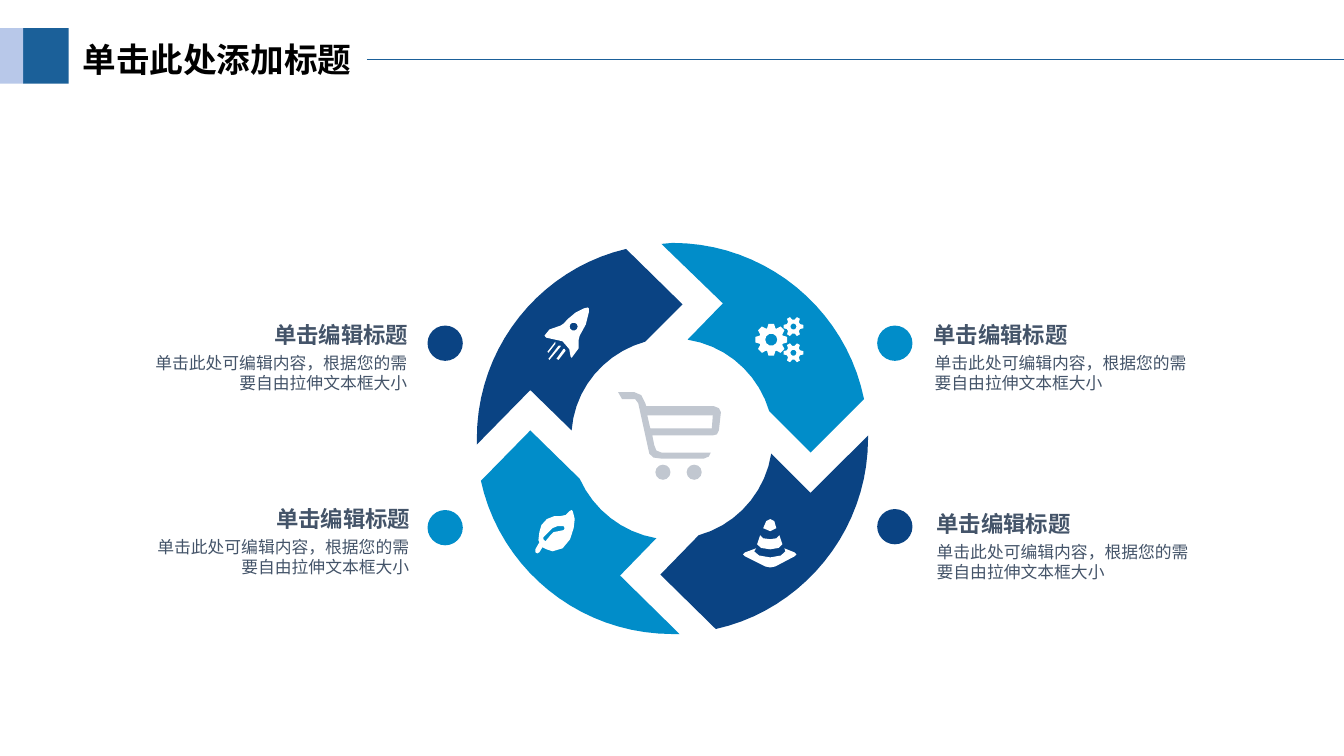
from math import cos, dist, sin, tau

from lxml.etree import SubElement
from pptx import Presentation
from pptx.dml.color import RGBColor
from pptx.enum.shapes import MSO_CONNECTOR as Connector, MSO_SHAPE as Shape
from pptx.enum.text import MSO_AUTO_SIZE as AutoSize, PP_ALIGN as Align
from pptx.oxml.ns import qn
from pptx.util import Inches, Pt

NAVY = RGBColor(0x0A, 0x43, 0x83)
SKY = RGBColor(0x01, 0x8D, 0xC9)
STEEL = RGBColor(0x1B, 0x60, 0x99)
PALE = RGBColor(0xB8, 0xC8, 0xE9)
SILVER = RGBColor(0xC1, 0xC7, 0xD0)
SLATE = RGBColor(0x44, 0x54, 0x69)
WHITE = RGBColor(0xFF, 0xFF, 0xFF)
BLACK = RGBColor(0, 0, 0)
CJK = "Noto Sans CJK SC"

deck = Presentation()
deck.slide_width, deck.slide_height = Inches(13.33), Inches(7.5)
slide = deck.slides.add_slide(deck.slide_layouts[6])
shapes = slide.shapes


def add_text(text, left, top, width, height, size, color=SLATE, font="Arial",
             bold=False, align=Align.LEFT, inset=0.0):
    box = shapes.add_textbox(*map(Inches, (left, top, width, height)))
    frame = box.text_frame
    frame.word_wrap = True
    frame.auto_size = AutoSize.SHAPE_TO_FIT_TEXT
    frame.margin_left = frame.margin_right = Inches(inset)
    frame.margin_top = frame.margin_bottom = Inches(inset / 2)
    para = frame.paragraphs[0]
    para.alignment = align
    span = para.add_run()
    span.text = text
    span.font.size, span.font.bold, span.font.name = Pt(size), bold, font
    span.font.color.rgb = color
    SubElement(span.font._element, qn("a:ea"), typeface=CJK)


def add_outline(contours, color):
    """Contour items: (x, y) corner, (cx, cy, r) circle, or a six-number Bezier."""
    builder = None
    for contour in contours:
        points = []
        for item in contour:
            if len(item) == 2:
                points.append(item)
            elif len(item) == 3:
                x, y, r = item
                points += [(x + r * cos(tau * i / 10), y + r * sin(tau * i / 10))
                           for i in range(10)]
            else:
                (ax, ay), (bx, by, cx, cy, dx, dy) = points[-1], item
                # Longer curves get more segments
                steps = 1 + int(8 * dist((ax, ay), (dx, dy)))
                for t in (i / steps for i in range(1, steps + 1)):
                    weights = (1 - t) ** 3, 3 * t * (1 - t) ** 2, 3 * t * t * (1 - t), t ** 3
                    points.append((sum(w * x for w, x in zip(weights, (ax, bx, cx, dx))),
                                   sum(w * y for w, y in zip(weights, (ay, by, cy, dy)))))
        start, *rest = [(Inches(x), Inches(y)) for x, y in points]
        if builder is None:
            builder = shapes.build_freeform(*start, scale=1.0)
        else:
            builder.move_to(*start)
        builder.add_line_segments(rest, close=True)
    shape = builder.convert_to_shape()
    shape.shadow.inherit = False
    shape.fill.solid()
    shape.fill.fore_color.rgb = color
    shape.line.fill.background()


# Header blocks, callout dots and cart wheels
DOT, WHEEL = 0.35, 0.15
for kind, left, top, width, height, color in (
    (Shape.RECTANGLE, 0.23, 0.28, 0.45, 0.55, STEEL),
    (Shape.RECTANGLE, 0, 0.28, 0.23, 0.55, PALE),
    (Shape.OVAL, 8.7, 3.23, DOT, DOT, SKY),
    (Shape.OVAL, 4.24, 3.23, DOT, DOT, NAVY),
    (Shape.OVAL, 4.24, 5.06, DOT, DOT, SKY),
    (Shape.OVAL, 8.7, 5.05, DOT, DOT, NAVY),
    (Shape.OVAL, 6.5, 4.61, WHEEL, WHEEL, SILVER),
    (Shape.OVAL, 6.81, 4.61, WHEEL, WHEEL, SILVER),
):
    block = shapes.add_shape(kind, *map(Inches, (left, top, width, height)))
    block.shadow.inherit = False
    block.fill.solid()
    block.fill.fore_color.rgb = color
    block.line.fill.background()

# Title and rule
add_text("单击此处添加标题", 0.72, 0.34, 2.91, 0.5, size=24, color=BLACK, font=CJK,
         bold=True, inset=0.1)
rule = shapes.add_connector(Connector.STRAIGHT, Inches(3.64), Inches(0.59),
                            deck.slide_width, Inches(0.59))
rule.line.color.rgb = STEEL
rule.line.width = Pt(0.75)
SubElement(rule._element.spPr, qn("a:effectLst"))

# Ring of four arrows
add_outline([[(6.77, 3.02), (6.4, 3.39), (6, 3.5, 5.7, 3.85, 5.67, 4.27), (5.26, 3.87),
              (4.73, 4.41), (4.73, 4.35), (4.73, 3.44, 5.36, 2.67, 6.21, 2.47)]], NAVY)
add_outline([[(8.57, 3.96), (8.04, 4.49), (7.63, 4.08), (7.52, 3.71, 7.21, 3.43, 6.82, 3.37),
              (7.17, 3.01), (6.56, 2.42), (6.67, 2.41),
              (7.6, 2.41, 8.39, 3.07, 8.57, 3.96)]], SKY)
add_outline([[(6.74, 6.29), (6.67, 6.29), (5.74, 6.29, 4.96, 5.64, 4.77, 4.77), (5.26, 4.27),
              (5.75, 4.75), (5.89, 5.06, 6.17, 5.28, 6.51, 5.34), (6.15, 5.71)]], SKY)
add_outline([[(8.61, 4.35), (8.61, 5.27, 7.96, 6.05, 7.1, 6.24), (6.55, 5.7), (6.93, 5.31),
              (7.3, 5.21, 7.59, 4.89, 7.65, 4.5), (8.04, 4.89), (8.61, 4.32)]], NAVY)

# Cart: frame and basket opening
add_outline([
    [(7.13, 4.05), (7.08, 4.03), (6.41, 4.03), (6.4, 4), (6.36, 3.92), (6.29, 3.89),
     (6.13, 3.89), (6.17, 3.96), (6.3, 3.96), (6.33, 4), (6.44, 4.5), (6.48, 4.54),
     (6.56, 4.55), (6.98, 4.55), (7.03, 4.53), (7.05, 4.49), (6.56, 4.49), (6.51, 4.47),
     (6.49, 4.42), (6.47, 4.32), (7.07, 4.32), (7.11, 4.31), (7.13, 4.27), (7.15, 4.09)],
    [(7.06, 4.25), (6.45, 4.25), (6.42, 4.12), (7.07, 4.12)],
], SILVER)

# Traffic cone: base, tip, middle band
add_outline([
    [(7.88, 5.48), (7.78, 5.44), (7.79, 5.47), (7.79, 5.5, 7.72, 5.53, 7.64, 5.53),
     (7.55, 5.53, 7.49, 5.5, 7.48, 5.47), (7.5, 5.44), (7.39, 5.48), (7.37, 5.5),
     (7.39, 5.52), (7.59, 5.62), (7.64, 5.63), (7.69, 5.62), (7.88, 5.52), (7.9, 5.5)],
    [(7.64, 5.27), (7.7, 5.24), (7.68, 5.17), (7.64, 5.15), (7.6, 5.17), (7.57, 5.24)],
    [(7.64, 5.45), (7.7, 5.45, 7.76, 5.43, 7.76, 5.4), (7.73, 5.31), (7.7, 5.34),
     (7.64, 5.35), (7.57, 5.34), (7.54, 5.31), (7.51, 5.4),
     (7.51, 5.43, 7.57, 5.45, 7.64, 5.45)],
], WHITE)

# Rocket: three flames, window, body
add_outline([
    [(5.6, 3.46), (5.61, 3.48), (5.54, 3.57), (5.52, 3.56), (5.59, 3.46)],
    [(5.56, 3.43), (5.56, 3.44), (5.45, 3.57), (5.44, 3.56), (5.54, 3.43)],
    [(5.51, 3.39), (5.51, 3.41), (5.44, 3.5), (5.43, 3.49), (5.5, 3.4)],
    [(5.69, 3.24, 0.04)],
    [(5.83, 3.05), (5.84, 3.06), (5.84, 3.1), (5.81, 3.22), (5.75, 3.33), (5.74, 3.37),
     (5.75, 3.41, 5.75, 3.5, 5.67, 3.55), (5.66, 3.54), (5.66, 3.48, 5.64, 3.35, 5.42, 3.35),
     (5.4, 3.33), (5.42, 3.3, 5.46, 3.23, 5.56, 3.23), (5.59, 3.21),
     (5.61, 3.19, 5.65, 3.14, 5.71, 3.1), (5.79, 3.06)],
], WHITE)

# Gears: each tooth has two root and two tip corners
gears = []
for x, y, teeth, root, tip, hole in ((7.65, 3.37, 8, 0.12, 0.16, 0.06),
                                     (7.87, 3.24, 6, 0.07, 0.1, 0.03),
                                     (7.87, 3.5, 6, 0.07, 0.1, 0.03)):
    corners = ((root, -0.35), (tip, -0.17), (tip, 0.17), (root, 0.35))
    gears.append([(x + r * cos(tau * i / teeth + turn), y + r * sin(tau * i / teeth + turn))
                  for i in range(teeth) for r, turn in corners])
    gears.append([(x, y, hole)])
add_outline(gears, WHITE)

# Leaf and its vein
add_outline([
    [(5.68, 5.07), (5.7, 5.15), (5.69, 5.24), (5.68, 5.32, 5.64, 5.39, 5.58, 5.44),
     (5.48, 5.47), (5.42, 5.45), (5.38, 5.43), (5.35, 5.48), (5.33, 5.49), (5.31, 5.48),
     (5.31, 5.45), (5.35, 5.38), (5.34, 5.36), (5.35, 5.28), (5.37, 5.21),
     (5.4, 5.17, 5.44, 5.12, 5.5, 5.12), (5.56, 5.12), (5.61, 5.11), (5.65, 5.07),
     (5.67, 5.06)],
    [(5.59, 5.26), (5.6, 5.24), (5.59, 5.22), (5.53, 5.22), (5.48, 5.24), (5.44, 5.28),
     (5.39, 5.33), (5.39, 5.35), (5.41, 5.37), (5.46, 5.31), (5.49, 5.28), (5.54, 5.27)],
], WHITE)

# Four captions: heading above body
for head_left, body_left, top, align in ((9.26, 9.27, 3.19, Align.LEFT),
                                         (9.29, 9.29, 5.06, Align.LEFT),
                                         (1.49, 1.49, 3.19, Align.RIGHT),
                                         (1.51, 1.51, 5.01, Align.RIGHT)):
    add_text("单击编辑标题", head_left, top, 2.56, 0.27, size=16, bold=True, align=align)
    add_text("单击此处可编辑内容，根据您的需要自由拉伸文本框大小", body_left, top + 0.31,
             2.55, 0.4, size=12, align=align)

deck.save("out.pptx")
